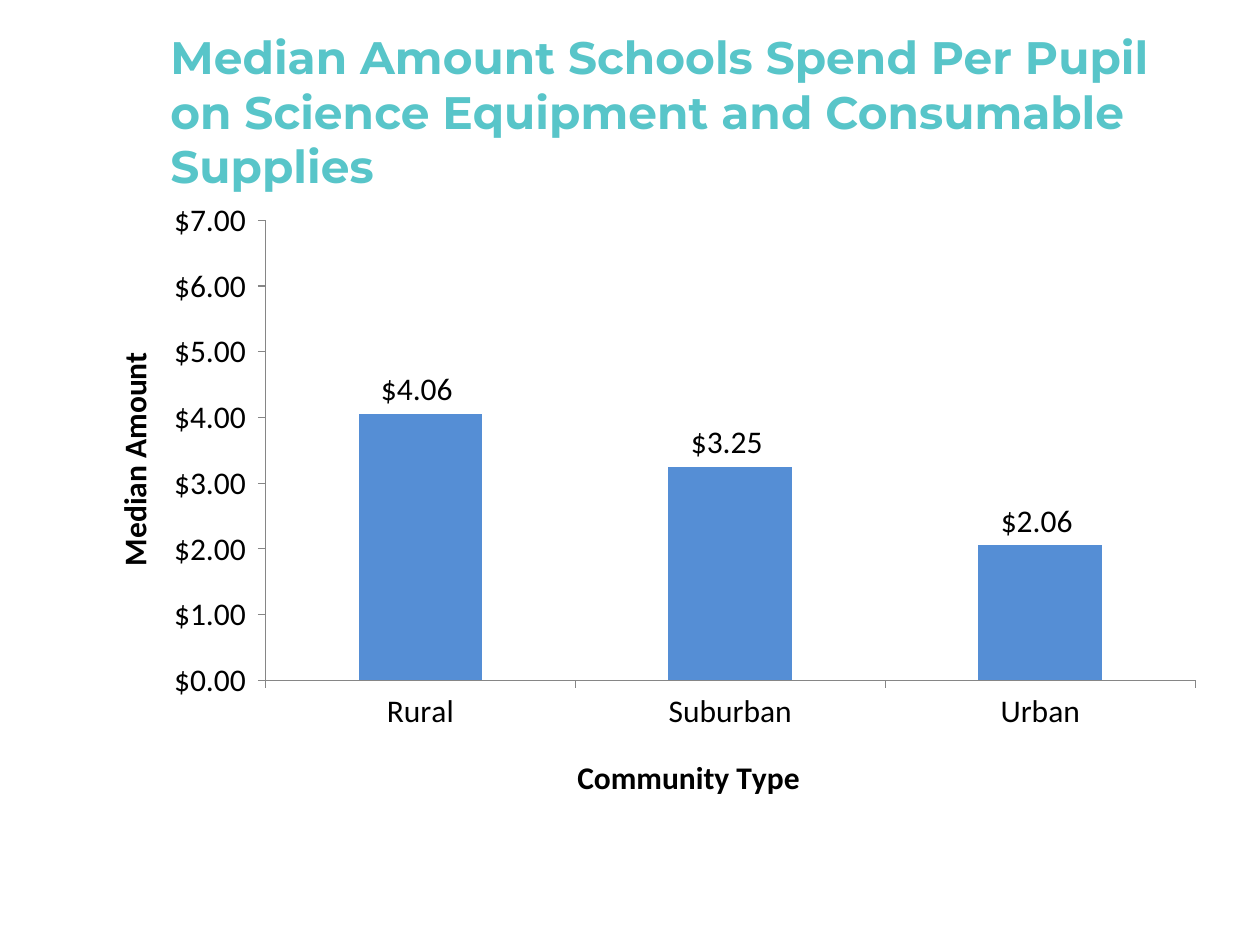
"""Build a slide charting median science spending per pupil by community type."""
from lxml import etree
from pptx import Presentation, util as u
from pptx.chart.data import CategoryChartData
from pptx.dml.color import RGBColor
from pptx.enum import chart as kinds, text
from pptx.oxml.ns import qn

COLORS = {"title": "58C5C9", "bar": "558ED5", "axis": "868686", "text": "000000"}
MONEY = '"$"#,##0.00_);[Red]\\("$"#,##0.00\\)'


def px(length):
    return u.Emu(round(length * 914400 / 126))


def set_font(font, name="Calibri", size=18, color="text", bold=False):
    font.name, font.size, font.bold = name, u.Pt(size), bold
    font.color.rgb = RGBColor.from_string(COLORS[color])


def write(frame, words, **style):
    span = frame.paragraphs[0].add_run()
    span.text = words
    set_font(span.font, **style)


def place(element, **fractions):
    """Give a chart part a manual layout in fractions of the chart."""
    for old in element.findall(qn("c:layout")):
        element.remove(old)
    layout = etree.Element(qn("c:layout"))
    manual = etree.SubElement(layout, qn("c:manualLayout"))
    if "w" in fractions:
        etree.SubElement(manual, qn("c:layoutTarget"), val="inner")
    for side in "xy":
        etree.SubElement(manual, qn(f"c:{side}Mode"), val="edge")
    for key, value in fractions.items():
        etree.SubElement(manual, qn(f"c:{key}"), val=str(value))
    element.insert(0 if element.find(qn("c:tx")) is None else 1, layout)


class SlideBuilder:
    """Holds the deck, the current slide and its style."""

    def __init__(self, width, height):
        self.deck = Presentation()
        self.deck.slide_width, self.deck.slide_height = px(width), px(height)
        self.page = self.deck.slides.add_slide(self.deck.slide_layouts[6])

    def title(self, words, left, top, width, height):
        box = self.page.shapes.add_textbox(*map(px, (left, top, width, height)))
        frame = box.text_frame
        frame.word_wrap = True
        frame.vertical_anchor = text.MSO_ANCHOR.MIDDLE
        write(frame, words, name="Montserrat", size=26, color="title", bold=True)

    def axis(self, axis, words, **spot):
        axis.has_major_gridlines = False
        axis.major_tick_mark = kinds.XL_TICK_MARK.OUTSIDE
        axis.minor_tick_mark = kinds.XL_TICK_MARK.NONE
        axis.format.line.color.rgb = RGBColor.from_string(COLORS["axis"])
        set_font(axis.tick_labels.font)
        write(axis.axis_title.text_frame, words, bold=True)
        place(axis.axis_title._element, **spot)

    def column_chart(self, values, left, top, width, height):
        data = CategoryChartData(number_format=MONEY)
        data.categories = list(values)
        data.add_series("Series 1", list(values.values()))
        chart = self.page.shapes.add_chart(
            kinds.XL_CHART_TYPE.COLUMN_CLUSTERED,
            *map(px, (left, top, width, height)), data).chart
        chart.has_legend = chart.has_title = False
        set_font(chart.font)
        place(chart._chartSpace.chart.plotArea, x=0.16, y=0.05, w=0.82, h=0.73)

        self.axis(chart.category_axis, "Community Type", x=0.43, y=0.89)
        self.axis(chart.value_axis, "Median Amount", x=0.02, y=0.25)
        scale = chart.value_axis
        scale.minimum_scale, scale.maximum_scale, scale.major_unit = 0, 7, 1
        scale.tick_labels.number_format = MONEY
        scale.tick_labels.number_format_is_linked = False

        plot = chart.plots[0]
        plot.gap_width, plot.vary_by_categories = 151, False
        fill = plot.series[0].format.fill
        fill.solid()
        fill.fore_color.rgb = RGBColor.from_string(COLORS["bar"])
        labels = plot.series[0].data_labels
        labels.show_value = True
        labels.position = kinds.XL_LABEL_POSITION.OUTSIDE_END
        labels.number_format, labels.number_format_is_linked = MONEY, False
        set_font(labels.font)


def main():
    slide = SlideBuilder(1260, 945)
    slide.column_chart({"Rural": 4.06, "Suburban": 3.25, "Urban": 2.06},
                       84, 189, 1134, 630)
    slide.title("Median Amount Schools Spend Per Pupil on Science Equipment "
                "and Consumable Supplies", 158, 32, 1040, 158)
    slide.deck.save("out.pptx")


if __name__ == "__main__":
    main()
